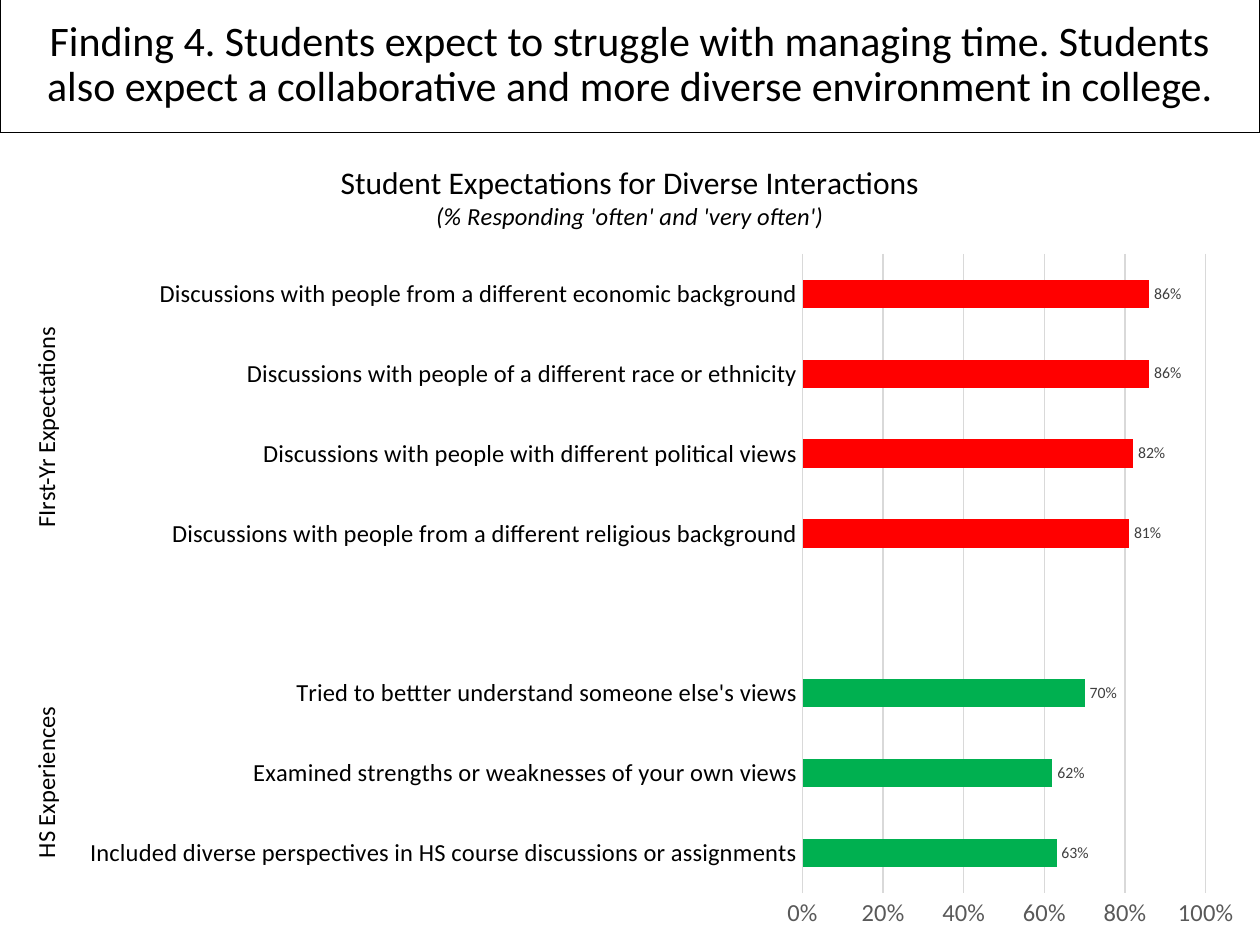
from lxml import etree
from pptx import Presentation
from pptx.chart.data import CategoryChartData
from pptx.dml.color import RGBColor
from pptx.enum.chart import XL_CHART_TYPE as ChartType, XL_LABEL_POSITION as LabelPosition
from pptx.enum.chart import XL_TICK_MARK as TickMark
from pptx.enum.shapes import MSO_SHAPE as Shape
from pptx.enum.text import MSO_ANCHOR as Anchor, PP_ALIGN as Align
from pptx.oxml.ns import qn
from pptx.util import Inches, Pt

FONT = "Calibri"
BLACK, GREY, RED, GREEN = "000000", "D9D9D9", "FF0000", "00B050"
FINDING = ("Finding 4. Students expect to struggle with managing time. "
           "Students also expect a collaborative and more diverse environment in college.")
HEADING = [
    ("Student Expectations for Diverse Interactions", 18, False),
    ("(% Responding 'often' and 'very often')", 14, True),
]
RESPONSES = [
    ("Included diverse perspectives in HS course discussions or assignments", 0.63, GREEN),
    ("Examined strengths or weaknesses of your own views", 0.62, GREEN),
    ("Tried to bettter understand someone else's views", 0.70, GREEN),
    ("", None, RED),
    ("Discussions with people from a different religious background", 0.81, RED),
    ("Discussions with people with different political views", 0.82, RED),
    ("Discussions with people of a different race or ethnicity", 0.86, RED),
    ("Discussions with people from a different economic background", 0.86, RED),
]
GROUPS = [("FIrst-Yr Expectations", 3.39), ("HS Experiences", 6.21)]
GROUP_CENTER, GROUP_WIDTH, GROUP_HEIGHT = 0.36, 2.2, 0.36
PLOT = {"x": 0.637, "y": 0.147, "w": 0.32, "h": 0.789}


def rgb(value):
    return RGBColor.from_string(value)


def style_font(font, size, color=BLACK, italic=False):
    font.name, font.size = FONT, Pt(size)
    font.bold, font.italic = False, italic
    font.color.rgb = rgb(color)


def add_run(paragraph, text, size, italic=False):
    run = paragraph.add_run()
    run.text = text
    style_font(run.font, size, italic=italic)


def style_line(line, color):
    line.color.rgb = rgb(color)
    line.width = Pt(0.75)


def add_finding(slide):
    banner = slide.shapes.add_shape(
        Shape.RECTANGLE, Inches(0), Inches(-0.01), Inches(10), Inches(1.06))
    banner.shadow.inherit = False
    banner.fill.background()
    style_line(banner.line, BLACK)
    frame = banner.text_frame
    frame.word_wrap = True
    frame.vertical_anchor = Anchor.MIDDLE
    paragraph = frame.paragraphs[0]
    paragraph.alignment = Align.CENTER
    paragraph.line_spacing = 0.9
    add_run(paragraph, FINDING, 24)


def place_plot(chart):
    plot_area = chart._chartSpace.chart.plotArea
    for old in plot_area.findall(qn("c:layout")):
        plot_area.remove(old)
    layout = etree.Element(qn("c:layout"))
    manual = etree.SubElement(layout, qn("c:manualLayout"))
    settings = [("layoutTarget", "inner"), ("xMode", "edge"), ("yMode", "edge"), *PLOT.items()]
    for tag, value in settings:
        etree.SubElement(manual, qn(f"c:{tag}")).set("val", str(value))
    plot_area.insert(0, layout)


def add_responses(slide):
    labels, shares, colors = zip(*RESPONSES)
    data = CategoryChartData(number_format="0%")
    data.categories = labels
    data.add_series("Series 1", shares)
    chart = slide.shapes.add_chart(
        ChartType.BAR_CLUSTERED, Inches(0), Inches(1.07), Inches(10), Inches(6.43), data).chart
    style_font(chart.font, 10)
    chart.has_legend = False
    chart.has_title = True
    heading = chart.chart_title.text_frame
    for i, (text, size, italic) in enumerate(HEADING):
        paragraph = heading.add_paragraph() if i else heading.paragraphs[0]
        add_run(paragraph, text, size, italic)
    chart.chart_title.include_in_layout = False

    bars = chart.plots[0]
    bars.gap_width = 182
    bars.vary_by_categories = False
    series = bars.series[0]
    series.invert_if_negative = False
    series.format.fill.solid()
    series.format.fill.fore_color.rgb = rgb(RED)
    for i, color in enumerate(colors):
        if color != RED:
            fill = series.points[i].format.fill
            fill.solid()
            fill.fore_color.rgb = rgb(color)
    values = series.data_labels
    values.show_value = True
    values.number_format, values.number_format_is_linked = "0%", False
    values.position = LabelPosition.OUTSIDE_END
    style_font(values.font, 9, "404040")

    categories, percent = chart.category_axis, chart.value_axis
    for axis, color in ((categories, BLACK), (percent, "595959")):
        axis.major_tick_mark = axis.minor_tick_mark = TickMark.NONE
        style_font(axis.tick_labels.font, 14, color)
    style_line(categories.format.line, GREY)
    percent.format.line.fill.background()
    percent.minimum_scale, percent.maximum_scale, percent.major_unit = 0, 1, 0.2
    percent.has_major_gridlines = True
    style_line(percent.major_gridlines.format.line, GREY)
    percent.tick_labels.number_format = "0%"
    percent.tick_labels.number_format_is_linked = False
    place_plot(chart)


def add_groups(slide):
    for name, middle in GROUPS:
        group = slide.shapes.add_textbox(
            Inches(GROUP_CENTER - GROUP_WIDTH / 2), Inches(middle - GROUP_HEIGHT / 2),
            Inches(GROUP_WIDTH), Inches(GROUP_HEIGHT))
        group.rotation = 270
        frame = group.text_frame
        frame.word_wrap = True
        frame.vertical_anchor = Anchor.MIDDLE
        frame.paragraphs[0].alignment = Align.CENTER
        add_run(frame.paragraphs[0], name, 14)


def main():
    deck = Presentation()
    deck.slide_width, deck.slide_height = Inches(10), Inches(7.5)
    slide = deck.slides.add_slide(deck.slide_layouts[6])
    add_responses(slide)
    add_groups(slide)
    add_finding(slide)
    deck.save("out.pptx")


if __name__ == "__main__":
    main()
